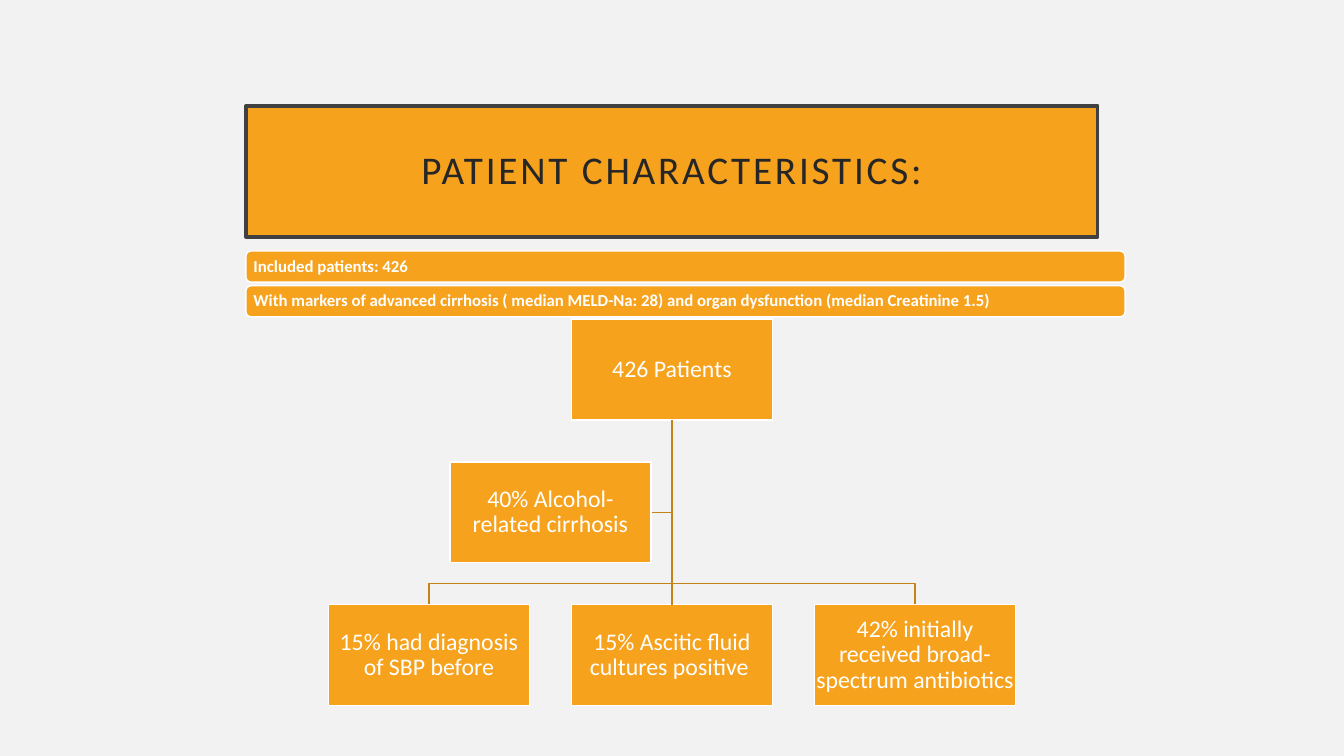
from dataclasses import dataclass

from lxml import etree
from pptx import Presentation
from pptx.dml.color import RGBColor
from pptx.enum import shapes, text
from pptx.oxml import ns
from pptx.util import Pt


@dataclass(frozen=True)
class Theme:
    font: str = "Calibri"
    background: str = "F2F2F2"
    accent: str = "F6A21D"
    branch: str = "C58217"
    frame: str = "404040"
    title_text: str = "262626"
    light: str = "FFFFFF"
    title_size: float = 28
    bar_size: float = 12
    box_size: float = 17


THEME = Theme()
CENTER_X = 480
COLUMN_STEP = 173.6
ROOT_TOP, ROW_STEP = 228, 102
BOX_WIDTH, BOX_HEIGHT = 143.5, 72
ELBOW_RISE = 15
BAR_LEFT, BAR_TOP, BAR_STEP = 175.7, 179.3, 24.8
BAR_WIDTH, BAR_HEIGHT = 628, 22.2

BARS = [
    "Included patients: 426",
    "With markers of advanced cirrhosis ( median MELD-Na: 28) "
    "and organ dysfunction (median Creatinine 1.5)",
]
# Column and row of each box in the chart, then its wording
ROOT = (0, 0, "426 Patients")
ASSISTANT = (-0.5, 1, "40% Alcohol- related cirrhosis")
LEAVES = [
    (-1, 2, "15% had diagnosis of SBP before"),
    (0, 2, "15% Ascitic fluid cultures positive "),
    (1, 2, "42% initially received broad-spectrum antibiotics"),
]


def color(value):
    return RGBColor.from_string(value)


def style_outline(shape, line_color, width):
    shape.line.color.rgb = color(line_color)
    shape.line.width = Pt(width)


def write(shape, wording, size, font_color, inset, align, bold=False):
    frame = shape.text_frame
    frame.word_wrap = True
    frame.auto_size = text.MSO_AUTO_SIZE.NONE
    frame.vertical_anchor = text.MSO_ANCHOR.MIDDLE
    frame.margin_left = frame.margin_right = Pt(inset)
    frame.margin_top = frame.margin_bottom = Pt(inset)
    frame.text = wording
    paragraph = frame.paragraphs[0]
    paragraph.alignment = align
    paragraph.line_spacing = 0.9
    font = paragraph.font
    font.name, font.size, font.bold = THEME.font, Pt(size), bold
    font.color.rgb = color(font_color)
    return paragraph


def set_title(slide, wording):
    title = slide.shapes.title
    title.left, title.top = Pt(175.7), Pt(75.6)
    title.width, title.height = Pt(608.4), Pt(93.6)
    title.fill.solid()
    title.fill.fore_color.rgb = color(THEME.accent)
    style_outline(title, THEME.frame, 2.5)
    paragraph = write(title, wording, THEME.title_size, THEME.title_text,
                      14.4, text.PP_ALIGN.CENTER)
    paragraph.runs[0].font._element.set("spc", "200")


def add_panel(slide, kind, left, top, width, height):
    shape = slide.shapes.add_shape(kind, Pt(left), Pt(top), Pt(width), Pt(height))
    shape.shadow.inherit = False
    shape.fill.solid()
    shape.fill.fore_color.rgb = color(THEME.accent)
    style_outline(shape, THEME.light, 1)
    return shape


def add_bar(slide, index, wording):
    bar = add_panel(slide, shapes.MSO_SHAPE.ROUNDED_RECTANGLE, BAR_LEFT,
                    BAR_TOP + index * BAR_STEP, BAR_WIDTH, BAR_HEIGHT)
    write(bar, wording, THEME.bar_size, THEME.light, 4.3,
          text.PP_ALIGN.LEFT, bold=True)


def column_x(column):
    """Return the centre of a column."""
    return CENTER_X + column * COLUMN_STEP


def row_top(row):
    return ROOT_TOP + row * ROW_STEP


def add_box(slide, column, row, wording):
    box = add_panel(slide, shapes.MSO_SHAPE.RECTANGLE,
                    column_x(column) - BOX_WIDTH / 2, row_top(row),
                    BOX_WIDTH, BOX_HEIGHT)
    write(box, wording, THEME.box_size, THEME.light, 0.7, text.PP_ALIGN.CENTER)
    return box


def add_branch(slide, *turns):
    """Draw an open line from the bottom of the root box through the turns."""
    builder = slide.shapes.build_freeform(
        Pt(CENTER_X), Pt(ROOT_TOP + BOX_HEIGHT), scale=1.0)
    builder.add_line_segments([(Pt(x), Pt(y)) for x, y in turns], close=False)
    branch = builder.convert_to_shape()
    branch.shadow.inherit = False
    branch.fill.background()
    style_outline(branch, THEME.branch, 1)


def add_trunk(slide, upper_box, lower_box):
    trunk = slide.shapes.add_connector(shapes.MSO_CONNECTOR.STRAIGHT, 0, 0, 0, 0)
    trunk.begin_connect(upper_box, 2)
    trunk.end_connect(lower_box, 0)
    style_outline(trunk, THEME.branch, 1)
    etree.SubElement(trunk._element.spPr, ns.qn("a:effectLst"))


def add_patient_chart(slide):
    column, row, _ = ASSISTANT
    middle = row_top(row) + BOX_HEIGHT / 2
    add_branch(slide, (CENTER_X, middle),
               (column_x(column) + BOX_WIDTH / 2, middle))
    for column, row, _ in LEAVES:
        if column:
            elbow = row_top(row) - ELBOW_RISE
            add_branch(slide, (CENTER_X, elbow), (column_x(column), elbow),
                       (column_x(column), row_top(row)))
    root = add_box(slide, *ROOT)
    leaves = [add_box(slide, *leaf) for leaf in LEAVES]
    add_box(slide, *ASSISTANT)
    add_trunk(slide, root, leaves[1])


def main():
    presentation = Presentation()
    presentation.slide_width, presentation.slide_height = Pt(960), Pt(540)
    slide = presentation.slides.add_slide(presentation.slide_layouts[5])
    slide.background.fill.solid()
    slide.background.fill.fore_color.rgb = color(THEME.background)
    set_title(slide, "PATIENT CHARACTERISTICS:")
    for index, wording in enumerate(BARS):
        add_bar(slide, index, wording)
    add_patient_chart(slide)
    presentation.save("out.pptx")


if __name__ == "__main__":
    main()
